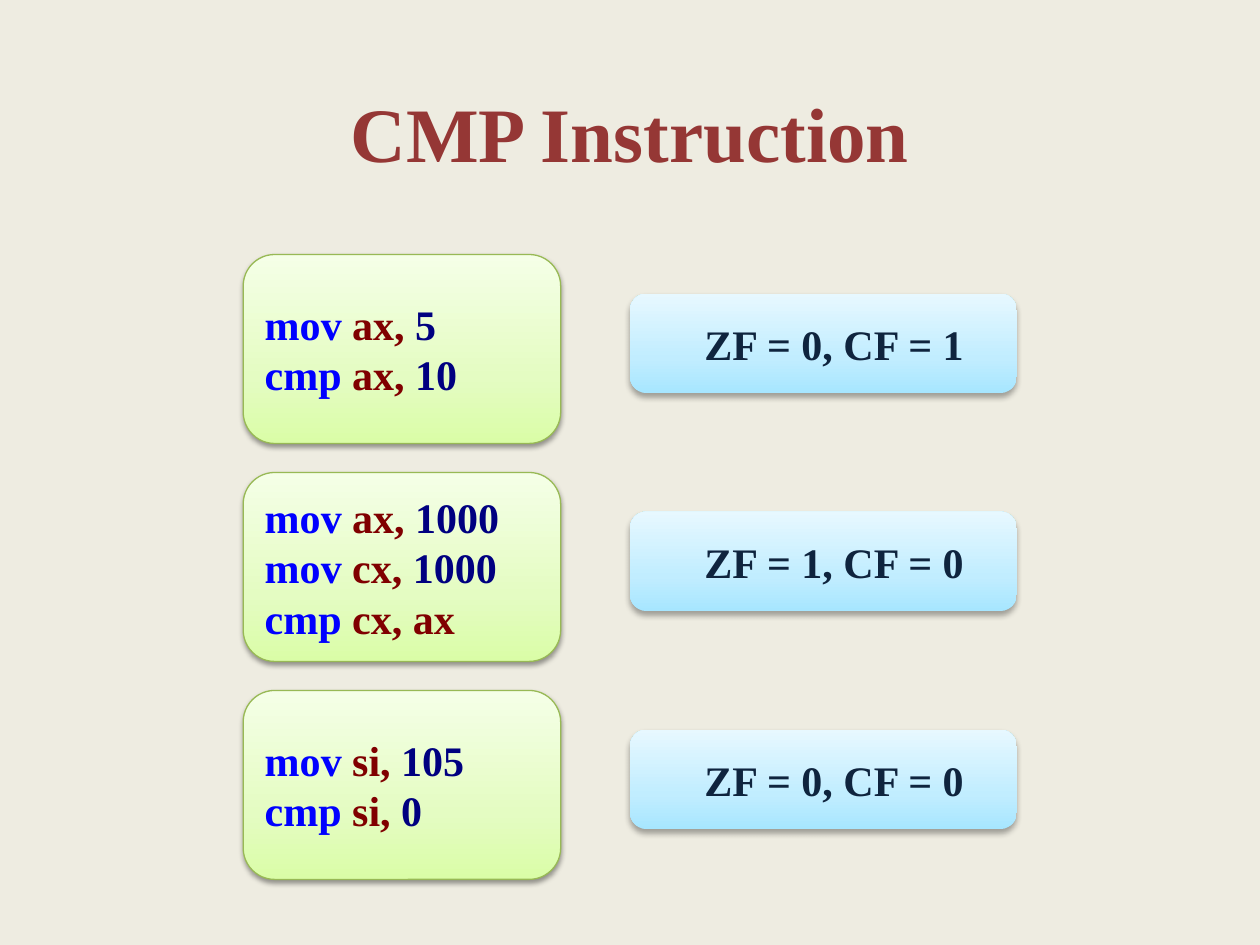
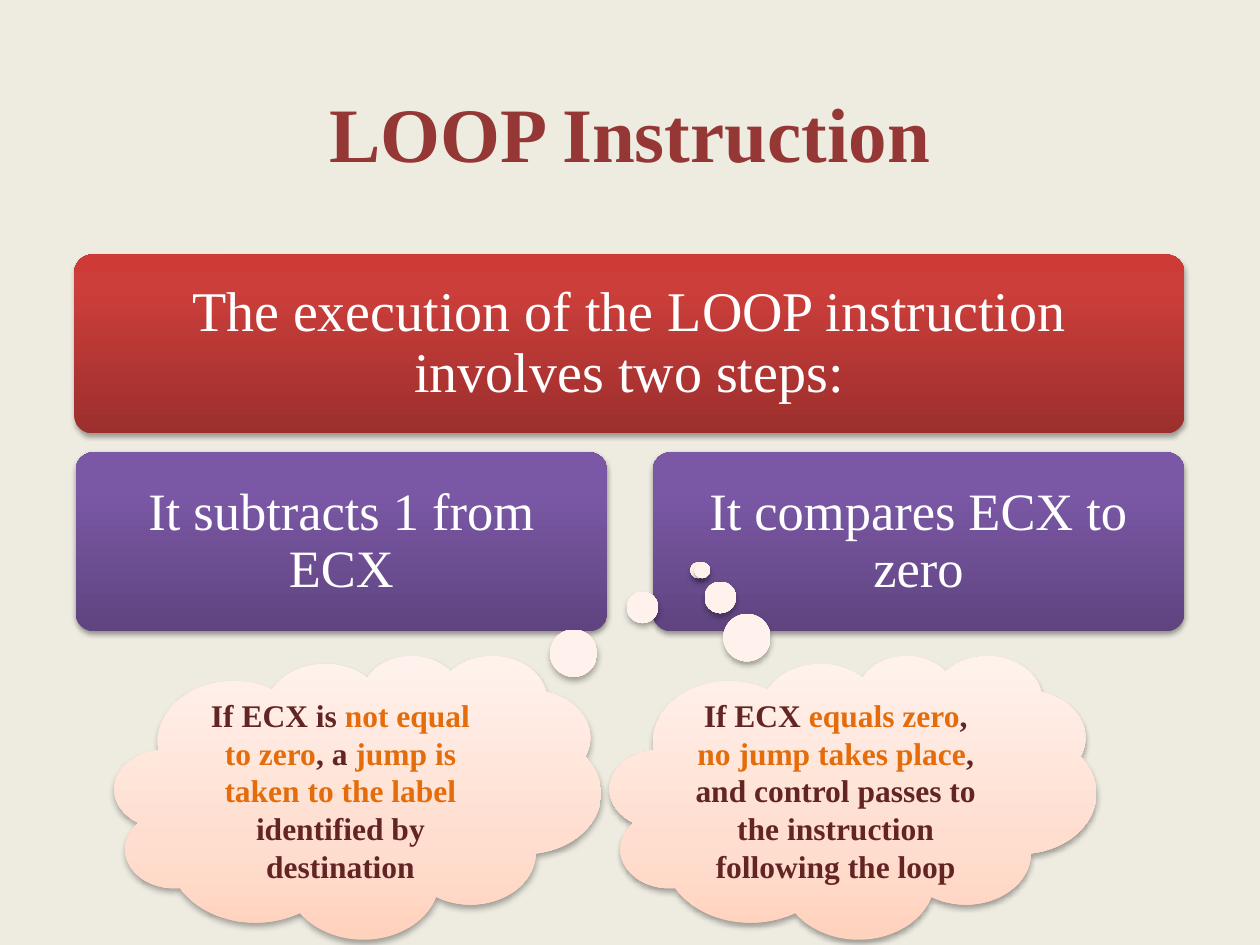
import pptx
import pptx.util
import pptx.dml.color
import pptx.enum.shapes
import pptx.enum.text
import pptx.oxml.ns
from lxml import etree

Inches = pptx.util.Inches
Pt = pptx.util.Pt
SHAPE = pptx.enum.shapes.MSO_SHAPE
ALIGN = pptx.enum.text.PP_ALIGN
MIDDLE = pptx.enum.text.MSO_ANCHOR.MIDDLE
qn = pptx.oxml.ns.qn

# Content
CMP_TITLE = "CMP Instruction"
CMP_EXAMPLES = [
    (["mov ax, 5", "cmp ax, 10"], "ZF = 0, CF = 1"),
    (["mov ax, 1000", "mov cx, 1000", "cmp cx, ax"], "ZF = 1, CF = 0"),
    (["mov si, 105", "cmp si, 0"], "ZF = 0, CF = 0"),
]

LOOP_TITLE = "LOOP Instruction"
LOOP_INTRO = "The execution of the LOOP instruction involves two steps:"
LOOP_STEPS = ["It subtracts 1 from ECX", "It compares ECX to zero"]
# Each outcome: callout tail, then (text, colour name) parts
LOOP_OUTCOMES = [
    ((0.7, -0.8), [
        ("If ECX is ", "cloud"), ("not equal to zero", "accent"),
        (", a ", "cloud"), ("jump is taken to the label ", "accent"),
        ("identified by destination", "cloud")]),
    ((-0.31, -0.8), [
        ("If ECX ", "cloud"), ("equals zero", "accent"), (", ", "cloud"),
        ("no jump takes place", "accent"),
        (", and control passes to the instruction following the loop", "cloud")]),
]


# Theme
class Theme:
    font = "Times New Roman"
    colors = dict(
        background="EEECE1", title="953735", mnemonic="0000FF", register="800000",
        number="000080", flags="0F243E", white="FFFFFF", cloud="632523",
        accent="E46C0A", code_line="98B955")
    sizes = dict(title=44, code=24, intro=32, step=30, cloud=18)
    # Gradient stops run from bottom to top: (percent, colour)
    gradients = dict(
        green=[(0, "DAFDA7"), (35, "E4FCC2"), (100, "F5FFE7")],
        blue=[(0, "A7E6FF"), (35, "C1EDFF"), (100, "E7F8FF")],
        red=[(0, "9C2F2D"), (80, "CB3E3A"), (100, "CE3B37")],
        purple=[(0, "5F4480"), (80, "7B58A6"), (100, "7C57A8")],
        peach=[(0, "FFD2BD"), (35, "FFDED0"), (100, "FFF2ED")])
    # Shadow: opacity percent, blur and distance in points
    shadows = dict(green=(38, 3.1, 1.6), blue=(32, 3.5, 2.2), red=(35, 3.1, 1.8),
                   purple=(38, 3.1, 1.6), peach=(32, 3.5, 2.2))


def rgb(name):
    return pptx.dml.color.RGBColor.from_string(Theme.colors[name])


# Shared helpers
def add_slide(prs, title):
    s = prs.slides.add_slide(prs.slide_layouts[5])
    sp = s.shapes.title
    sp.left, sp.top, sp.width, sp.height = map(Inches, (0, 0.39, 10, 1.31))
    write(sp.text_frame, [[(title, "title")]], "title", bold=True)
    return s


def write(tf, lines, size, bold=False, align=ALIGN.CENTER, spacing=None):
    """Fill a text frame; each line is a list of (text, colour name)."""
    tf.word_wrap = True
    tf.vertical_anchor = MIDDLE
    for i, parts in enumerate(lines):
        p = tf.add_paragraph() if i else tf.paragraphs[0]
        p.alignment = align
        p.line_spacing = spacing
        p.font.name = Theme.font
        p.font.size = Pt(Theme.sizes[size])
        p.font.bold = bold
        for text, color in parts:
            r = p.add_run()
            r.text = text
            r.font.color.rgb = rgb(color)


def add_color(parent, value):
    return etree.SubElement(parent, qn("a:srgbClr"), val=value)


def add_panel(s, kind, box, look, adjustments=()):
    """Add a shape with a vertical gradient and a soft shadow below it."""
    sp = s.shapes.add_shape(kind, *map(Inches, box))
    for i, value in enumerate(adjustments):
        sp.adjustments[i] = value
    sp.line.fill.background()

    sp.fill.gradient()
    sp.fill.gradient_angle = 90
    stops = sp._element.spPr.find(qn("a:gradFill")).find(qn("a:gsLst"))
    for stop in list(stops):
        stops.remove(stop)
    for percent, value in Theme.gradients[look]:
        add_color(etree.SubElement(stops, qn("a:gs"), pos=str(percent * 1000)), value)

    sp.shadow.inherit = False
    opacity, blur, distance = Theme.shadows[look]
    shadow = etree.SubElement(
        sp._element.spPr.find(qn("a:effectLst")), qn("a:outerShdw"),
        blurRad=str(Pt(blur)), dist=str(Pt(distance)), dir="5400000", rotWithShape="0")
    etree.SubElement(add_color(shadow, "000000"), qn("a:alpha"), val=str(opacity * 1000))
    return sp


def color_code(line):
    """Split a line of assembly into coloured words."""
    words = line.split(" ")
    parts = [(words[0], "mnemonic")]
    for word in words[1:]:
        parts.append((" " + word, "number" if word.isdigit() else "register"))
    return parts


# CMP slide: code on the left, resulting flags on the right
def build_cmp(prs):
    s = add_slide(prs, CMP_TITLE)
    top, pitch = 2.02, 1.73
    for i, (code, flags) in enumerate(CMP_EXAMPLES):
        y = top + i * pitch
        sp = add_panel(s, SHAPE.ROUNDED_RECTANGLE, (1.93, y, 2.52, 1.5), "green")
        sp.line.color.rgb = rgb("code_line")
        sp.line.width = Pt(0.75)
        write(sp.text_frame, [color_code(line) for line in code], "code",
              bold=True, align=ALIGN.LEFT)

        sp = add_panel(s, SHAPE.ROUNDED_RECTANGLE, (5, y + 0.31, 3.07, 0.79), "blue")
        sp.text_frame.margin_left = Inches(0.27)
        write(sp.text_frame, [[(flags, "flags")]], "code", bold=True)


# LOOP slide: intro band, two steps, two outcome clouds
def add_block(s, box, look, text, size, inset):
    sp = add_panel(s, SHAPE.ROUNDED_RECTANGLE, box, look, [0.1])
    tf = sp.text_frame
    tf.margin_left = tf.margin_right = tf.margin_top = tf.margin_bottom = Inches(inset)
    write(tf, [[(text, "white")]], size, spacing=0.9)


def build_loop(prs):
    s = add_slide(prs, LOOP_TITLE)
    add_block(s, (0.59, 2.02, 8.81, 1.42), "red", LOOP_INTRO, "intro", 0.19)
    for i, step in enumerate(LOOP_STEPS):
        add_block(s, (0.6 + i * 4.58, 3.59, 4.22, 1.42), "purple", step, "step", 0.12)
    for i, (tail, parts) in enumerate(LOOP_OUTCOMES):
        sp = add_panel(s, SHAPE.CLOUD_CALLOUT, (0.91 + i * 3.93, 5.2, 3.86, 2.25),
                       "peach", tail)
        write(sp.text_frame, [parts], "cloud", bold=True)


def main():
    prs = pptx.Presentation()
    prs.slide_width, prs.slide_height = Inches(10), Inches(7.5)
    fill = prs.slide_master.background.fill
    fill.solid()
    fill.fore_color.rgb = rgb("background")
    build_cmp(prs)
    build_loop(prs)
    prs.save("out.pptx")


if __name__ == "__main__":
    main()
